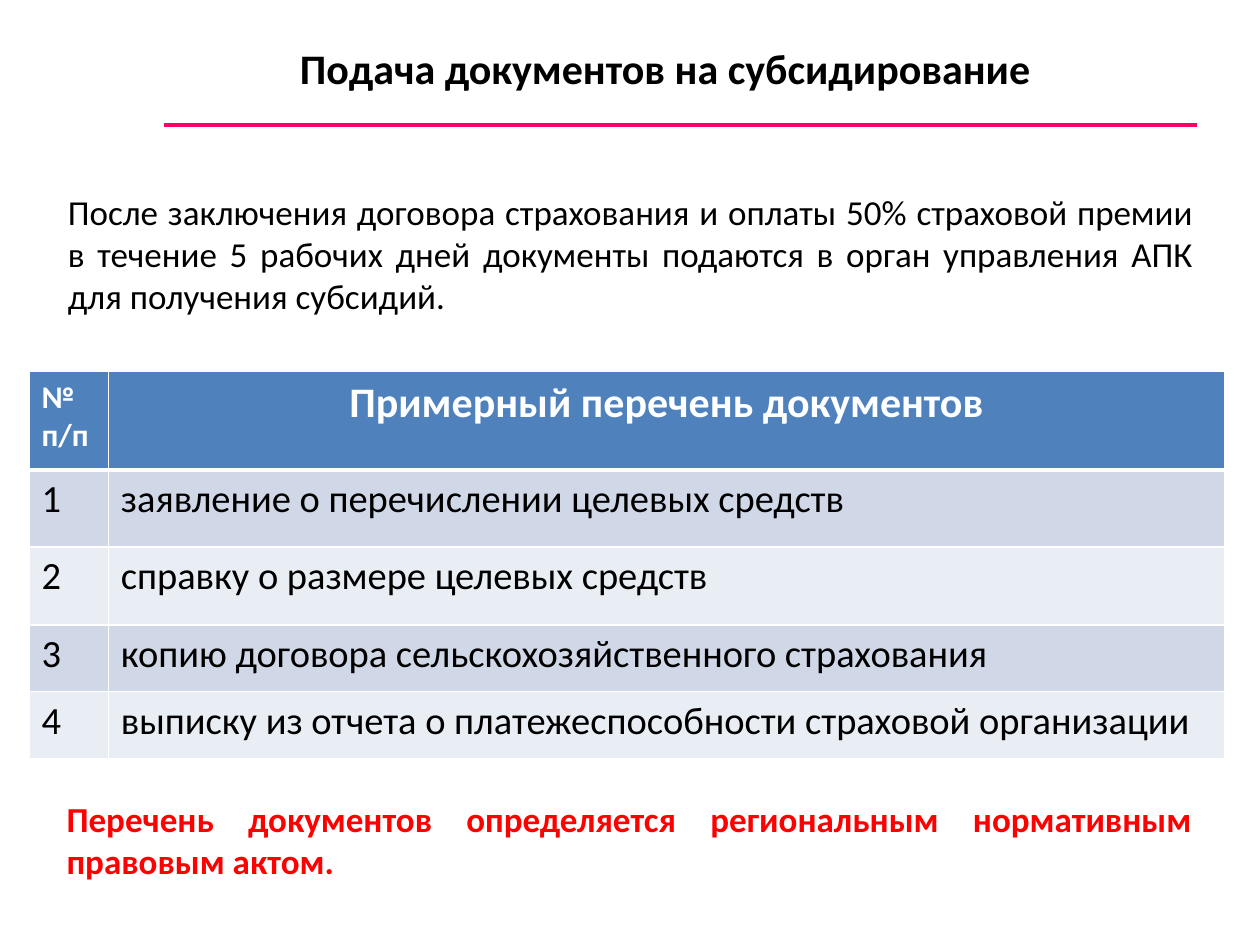
from lxml import etree
from pptx import Presentation
from pptx.dml.color import RGBColor
from pptx.enum.shapes import MSO_CONNECTOR
from pptx.enum.text import MSO_ANCHOR, PP_ALIGN
from pptx.oxml.ns import qn
from pptx.util import Inches, Pt

LEFT, CENTER, JUSTIFY = PP_ALIGN.LEFT, PP_ALIGN.CENTER, PP_ALIGN.JUSTIFY
TOP, MIDDLE = MSO_ANCHOR.TOP, MSO_ANCHOR.MIDDLE
STRAIGHT = MSO_CONNECTOR.STRAIGHT
FONT = "Calibri"
COLORS = {
    "text": "000000",
    "white": "FFFFFF",
    "warning": "FF0000",
    "rule": "FF0066",
    "header": "4F81BD",
    "odd_row": "D0D8E8",
    "even_row": "E9EDF4",
}
DOCUMENTS = [
    "заявление о перечислении целевых средств",
    "справку о размере целевых средств",
    "копию договора сельскохозяйственного страхования",
    "выписку из отчета о платежеспособности страховой организации",
]
COLUMN_WIDTHS = [0.63, 8.86]
ROW_HEIGHTS = [0.78, 0.61, 0.62, 0.53, 0.53]


def rgb(name):
    """Return the palette colour of that name."""
    return RGBColor.from_string(COLORS[name])


def write(frame, text, size, color="text", bold=False, align=LEFT):
    """Put one formatted run into the first paragraph of a text frame."""
    paragraph = frame.paragraphs[0]
    paragraph.alignment = align
    run = paragraph.add_run()
    run.text = text
    run.font.name = FONT
    run.font.size = Pt(size)
    run.font.bold = bold
    run.font.color.rgb = rgb(color)


def add_text(slide, box, text, size, anchor=TOP, **style):
    """Add a wrapped text box."""
    frame = slide.shapes.add_textbox(*map(Inches, box)).text_frame
    frame.word_wrap = True
    frame.vertical_anchor = anchor
    write(frame, text, size, **style)


def add_rule(slide, left, right, y):
    """Add the coloured rule under the title."""
    rule = slide.shapes.add_connector(
        STRAIGHT, Inches(left), Inches(y), Inches(right), Inches(y))
    rule.line.color.rgb = rgb("rule")
    rule.line.width = Pt(2.5)
    etree.SubElement(rule._element.spPr, qn("a:effectLst"))


def style_cell(cell, fill, bottom_width):
    """Give a cell white borders and a solid fill."""
    properties = cell._tc.get_or_add_tcPr()
    for side, width in (("L", 1), ("R", 1), ("T", 1), ("B", bottom_width)):
        border = etree.SubElement(properties, qn(f"a:ln{side}"), w=str(Pt(width)))
        solid = etree.SubElement(border, qn("a:solidFill"))
        etree.SubElement(solid, qn("a:srgbClr"), val=COLORS["white"])
    cell.fill.solid()
    cell.fill.fore_color.rgb = rgb(fill)


def add_document_table(slide, left, top):
    """Add the numbered table of documents."""
    table = slide.shapes.add_table(
        len(ROW_HEIGHTS), len(COLUMN_WIDTHS), Inches(left), Inches(top),
        Inches(sum(COLUMN_WIDTHS)), Inches(sum(ROW_HEIGHTS))).table
    for column, width in zip(table.columns, COLUMN_WIDTHS):
        column.width = Inches(width)
    for row, height in zip(table.rows, ROW_HEIGHTS):
        row.height = Inches(height)

    number_head, title_head = table.rows[0].cells
    for cell in (number_head, title_head):
        style_cell(cell, "header", 3)
    write(number_head.text_frame, "№ п/п", 18, "white", True)
    write(title_head.text_frame, "Примерный перечень документов", 24,
          "white", True, CENTER)

    for number, document in enumerate(DOCUMENTS, start=1):
        fill = "odd_row" if number % 2 else "even_row"
        for cell, text in zip(table.rows[number].cells, (str(number), document)):
            style_cell(cell, fill, 1)
            write(cell.text_frame, text, 22)


def main():
    """Build the slide and save it."""
    deck = Presentation()
    deck.slide_width, deck.slide_height = Inches(10), Inches(7.5)
    slide = deck.slides.add_slide(deck.slide_layouts[6])
    add_text(slide, (0.75, 0.29, 9.06, 0.5), "Подача документов на субсидирование",
             24, anchor=MIDDLE, bold=True, align=CENTER)
    add_document_table(slide, 0.23, 2.95)
    add_text(slide, (0.44, 1.46, 9.13, 1.11),
             "После заключения договора страхования и оплаты 50% страховой премии "
             "в течение 5 рабочих дней документы подаются в орган управления АПК "
             "для получения субсидий.", 20, align=JUSTIFY)
    add_text(slide, (0.43, 6.28, 9.13, 0.77),
             "Перечень документов определяется региональным нормативным "
             "правовым актом.", 20, color="warning", bold=True, align=JUSTIFY)
    add_rule(slide, 1.3, 9.5, 0.99)
    deck.save("out.pptx")


if __name__ == "__main__":
    main()
